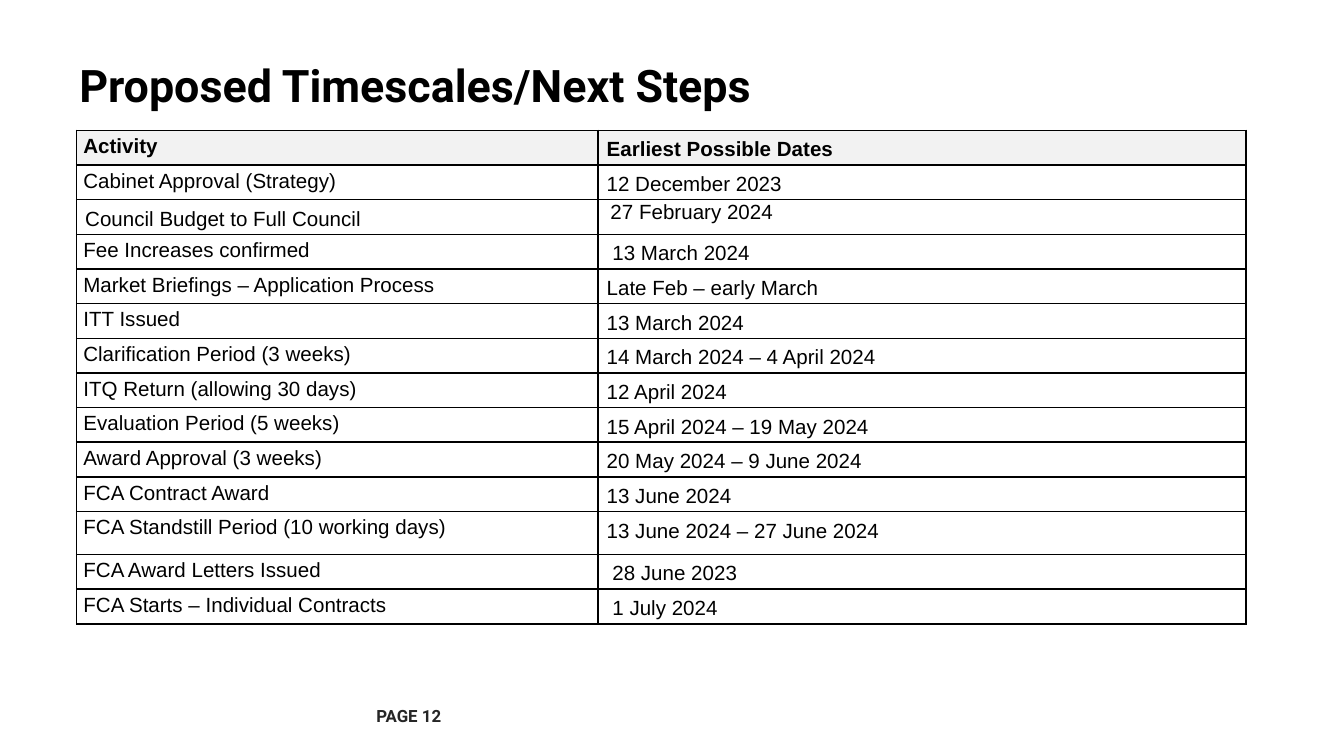
import dataclasses

import lxml.etree
import pptx
import pptx.dml.color
import pptx.enum.text
import pptx.oxml.ns
import pptx.util


@dataclasses.dataclass(frozen=True)
class Theme:
    """Colours, fonts and sizes of the slide."""
    ink: str = "000000"
    footer: str = "262626"
    header: str = "F2F2F2"
    heading_font: str = "Roboto"
    body_font: str = "Arial"
    title_size: int = 24
    table_size: int = 11
    footer_size: int = 9
    border_width: int = 1


THEME = Theme()
WIDTH = 10
HEIGHT = WIDTH * 9 / 16
ROW, TALL_ROW = 0.24, 0.32
COLUMNS = (3.88, 4.82)
HEADING_MARGINS = (6.5, 3.2, 6.5, 3.2)
TIGHT = (3.6, 0.7, 3.6, 0)
ROOMY = (4.6, 2.4, 4.6, 1)
HEADINGS = ("Activity", "Earliest Possible Dates")
BUDGET = "Council Budget to Full Council"
STANDSTILL = "FCA Standstill Period (10 working days)"
STEPS = (
    ("Cabinet Approval (Strategy)", "12 December 2023"),
    (BUDGET, " 27 February 2024"),
    ("Fee Increases confirmed", " 13 March 2024"),
    ("Market Briefings – Application Process", "Late Feb – early March"),
    ("ITT Issued", "13 March 2024"),
    ("Clarification Period (3 weeks)", "14 March 2024 – 4 April 2024"),
    ("ITQ Return (allowing 30 days)", "12 April 2024"),
    ("Evaluation Period (5 weeks)", "15 April 2024 – 19 May 2024"),
    ("Award Approval (3 weeks)", "20 May 2024 – 9 June 2024"),
    ("FCA Contract Award", "13 June 2024"),
    (STANDSTILL, "13 June 2024 – 27 June 2024"),
    ("FCA Award Letters Issued", " 28 June 2023"),
    ("FCA Starts – Individual Contracts", " 1 July 2024"),
)


def inches(values):
    """Convert several numbers to lengths."""
    return [pptx.util.Inches(value) for value in values]


def style_font(paragraph, face, size, colour, bold):
    """Format every run of a paragraph."""
    for run in paragraph.runs:
        run.font.name = face
        run.font.size = pptx.util.Pt(size)
        run.font.bold = bold
        run.font.color.rgb = pptx.dml.color.RGBColor.from_string(colour)


def set_margins(holder, margins):
    """Set the left, top, right and bottom insets, in points."""
    (holder.margin_left, holder.margin_top,
     holder.margin_right, holder.margin_bottom) = map(pptx.util.Pt, margins)


def add_heading(slide, box, wording, size, colour):
    """Place one bold line, centred vertically in its box."""
    frame = slide.shapes.add_textbox(*inches(box)).text_frame
    frame.word_wrap = True
    frame.vertical_anchor = pptx.enum.text.MSO_ANCHOR.MIDDLE
    set_margins(frame, HEADING_MARGINS)
    frame.text = wording
    style_font(frame.paragraphs[0], THEME.heading_font, size, colour, True)


def add_borders(cell):
    """Draw a solid line on all four sides of a cell."""
    properties = cell._tc.get_or_add_tcPr()
    qn = pptx.oxml.ns.qn
    for side in ("a:lnL", "a:lnR", "a:lnT", "a:lnB"):
        line = lxml.etree.SubElement(properties, qn(side),
                                     w=str(pptx.util.Pt(THEME.border_width)))
        fill = lxml.etree.SubElement(line, qn("a:solidFill"))
        lxml.etree.SubElement(fill, qn("a:srgbClr"), val=THEME.ink)


def fill_cell(cell, wording, margins, is_header, is_plain):
    """Write and format one cell of the timetable."""
    cell.text = wording
    set_margins(cell, margins)
    add_borders(cell)
    if is_header:
        cell.fill.solid()
        cell.fill.fore_color.rgb = pptx.dml.color.RGBColor.from_string(THEME.header)
    else:
        cell.fill.background()
    paragraph = cell.text_frame.paragraphs[0]
    if not is_plain:
        paragraph.alignment = pptx.enum.text.PP_ALIGN.JUSTIFY
        paragraph.line_spacing = 1.15
        paragraph.space_after = pptx.util.Pt(6)
    style_font(paragraph, THEME.body_font, THEME.table_size, THEME.ink, is_header)


def add_timetable(slide, left, top):
    """Place the table of activities and dates."""
    rows = (HEADINGS, *STEPS)
    box = (left, top, sum(COLUMNS), ROW * len(rows))
    table = slide.shapes.add_table(len(rows), len(COLUMNS), *inches(box)).table
    for column, width in zip(table.columns, inches(COLUMNS)):
        column.width = width
    for index, (activity, dates) in enumerate(rows):
        height = TALL_ROW if activity == STANDSTILL else ROW
        table.rows[index].height = pptx.util.Inches(height)
        is_budget = activity == BUDGET
        margins = (ROOMY, TIGHT) if is_budget else (TIGHT, ROOMY)
        for column, wording in enumerate((activity, dates)):
            fill_cell(table.cell(index, column), wording, margins[column],
                      index == 0, is_budget and column == 1)


def main():
    """Build and save the timescales slide."""
    deck = pptx.Presentation()
    deck.slide_width, deck.slide_height = inches((WIDTH, HEIGHT))
    slide = deck.slides.add_slide(deck.slide_layouts[6])
    add_heading(slide, (0.27 * WIDTH + 0.01, 0.92 * HEIGHT, 0.09 * WIDTH, 0.3),
                "PAGE 12", THEME.footer_size, THEME.footer)
    add_heading(slide, (0.05 * WIDTH, 0.04 * HEIGHT, 0.9 * WIDTH, 0.81),
                "Proposed Timescales/Next Steps", THEME.title_size, THEME.ink)
    add_timetable(slide, 0.057 * WIDTH, 0.97)
    deck.save("out.pptx")


if __name__ == "__main__":
    main()
